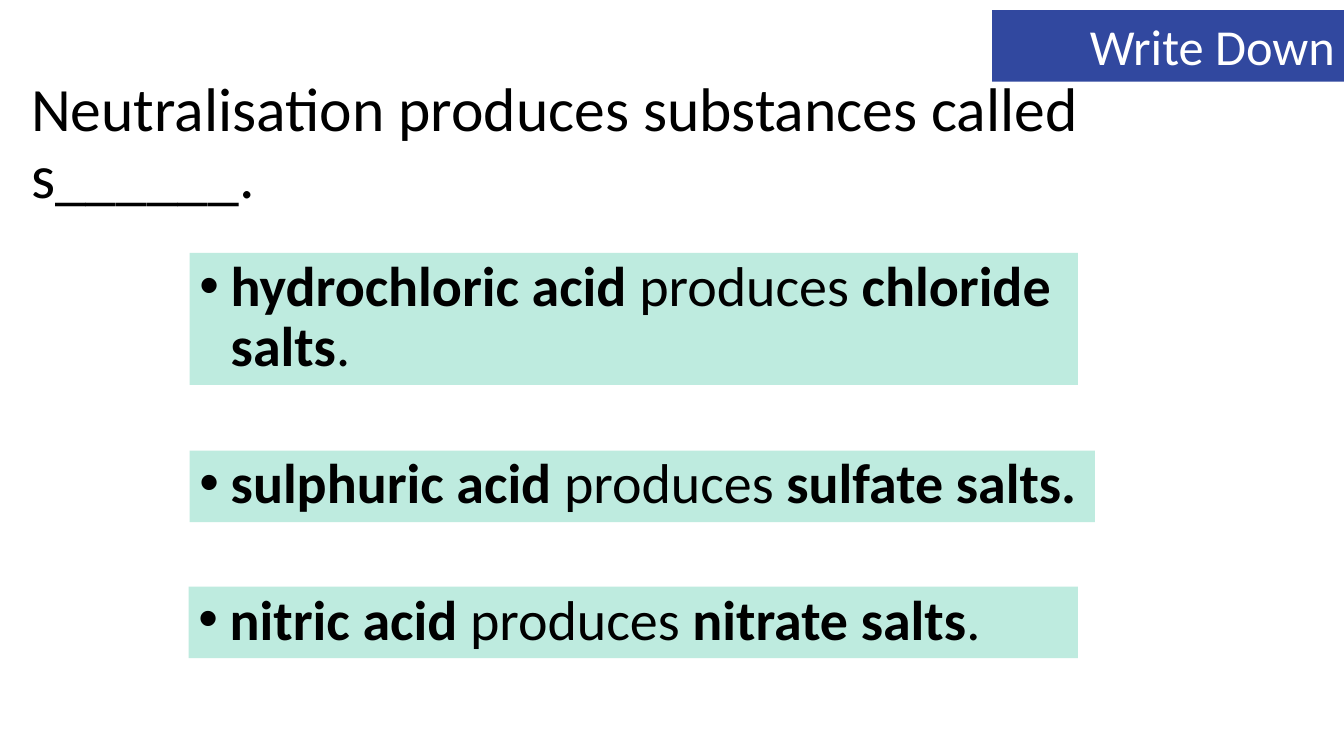
from lxml.etree import SubElement
from pptx import Presentation
from pptx.dml.color import RGBColor
from pptx.enum.shapes import MSO_SHAPE
from pptx.enum.text import MSO_ANCHOR, MSO_AUTO_SIZE, PP_ALIGN
from pptx.oxml.ns import qn
from pptx.util import Inches, Pt

COLORS = {"mint": "BEEBDF", "blue": "31489F", "black": "000000", "white": "FFFFFF"}
FONT = "Calibri"
ACIDS = [
    (1.88, 2.51, 8.81, 1.31, "hydrochloric acid", "chloride salts", "."),
    (1.88, 4.47, 8.98, 0.71, "sulphuric acid", "sulfate salts.", ""),
    (1.87, 5.82, 8.82, 0.71, "nitric acid", "nitrate salts", "."),
]


def paint(name):
    return RGBColor.from_string(COLORS[name])


def add_run(para, text, size, color="black", bold=False):
    run = para.add_run()
    run.text = text
    font = run.font
    font.name, font.size, font.bold = FONT, Pt(size), bold
    font.color.rgb = paint(color)


def add_panel(slide, area, fill):
    panel = slide.shapes.add_shape(MSO_SHAPE.RECTANGLE, *map(Inches, area))
    panel.shadow.inherit = False
    panel.fill.solid()
    panel.fill.fore_color.rgb = paint(fill)
    panel.line.fill.background()
    frame = panel.text_frame
    frame.word_wrap = True
    frame.auto_size = MSO_AUTO_SIZE.SHAPE_TO_FIT_TEXT
    frame.vertical_anchor = MSO_ANCHOR.TOP
    return frame.paragraphs[0]


def add_bullet(para, indent):
    props = para._p.get_or_add_pPr()
    props.set("marL", str(Inches(indent)))
    props.set("indent", str(Inches(-indent)))
    SubElement(props, qn("a:buFont"), typeface="Arial")
    SubElement(props, qn("a:buChar"), char="•")


def add_acid(slide, area, acid, salt, stop):
    para = add_panel(slide, area, "mint")
    para.alignment = PP_ALIGN.LEFT
    para.line_spacing = 0.9
    add_bullet(para, 0.31)
    add_run(para, acid, 40, bold=True)
    add_run(para, " produces ", 40)
    add_run(para, salt, 40, bold=True)
    if stop:
        add_run(para, stop, 40)


def add_title(slide, text):
    area = map(Inches, (0.21, 0.73, 12.95, 1.45))
    frame = slide.shapes.add_textbox(*area).text_frame
    frame.word_wrap = True
    frame.margin_right = Inches(0.4)
    para = frame.paragraphs[0]
    para.line_spacing = 0.9
    add_run(para, text, 44)


def add_label(slide, text):
    para = add_panel(slide, (9.84, 0.1, 3.5, 0.71), "blue")
    para.alignment = PP_ALIGN.RIGHT
    add_run(para, text, 36, "white")


def main():
    deck = Presentation()
    deck.slide_width, deck.slide_height = Inches(13.33), Inches(7.5)
    slide = deck.slides.add_slide(deck.slide_layouts[6])
    for *area, acid, salt, stop in ACIDS:
        add_acid(slide, area, acid, salt, stop)
    add_title(slide, "Neutralisation produces substances called s______.")
    add_label(slide, "Write Down")
    deck.save("out.pptx")


if __name__ == "__main__":
    main()
